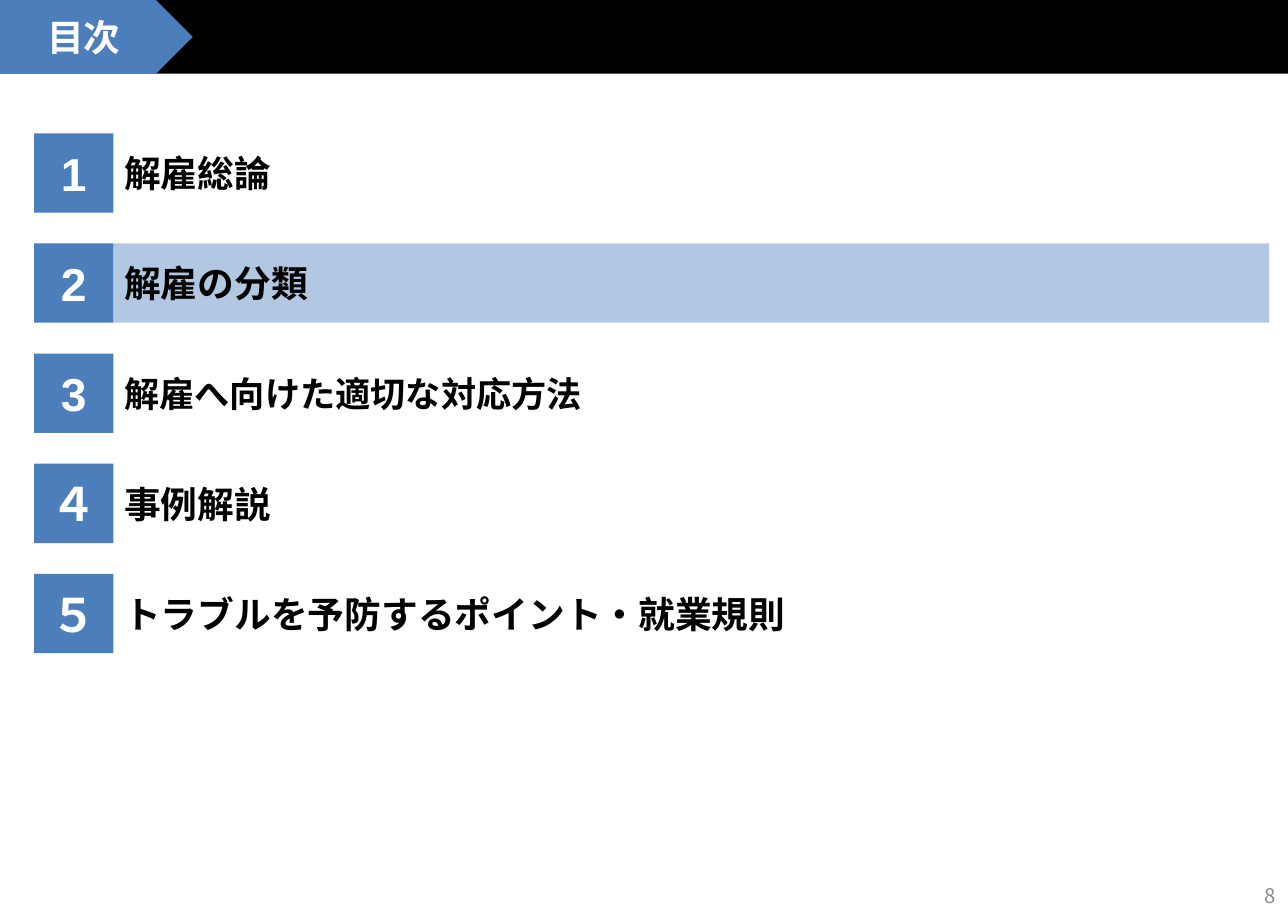
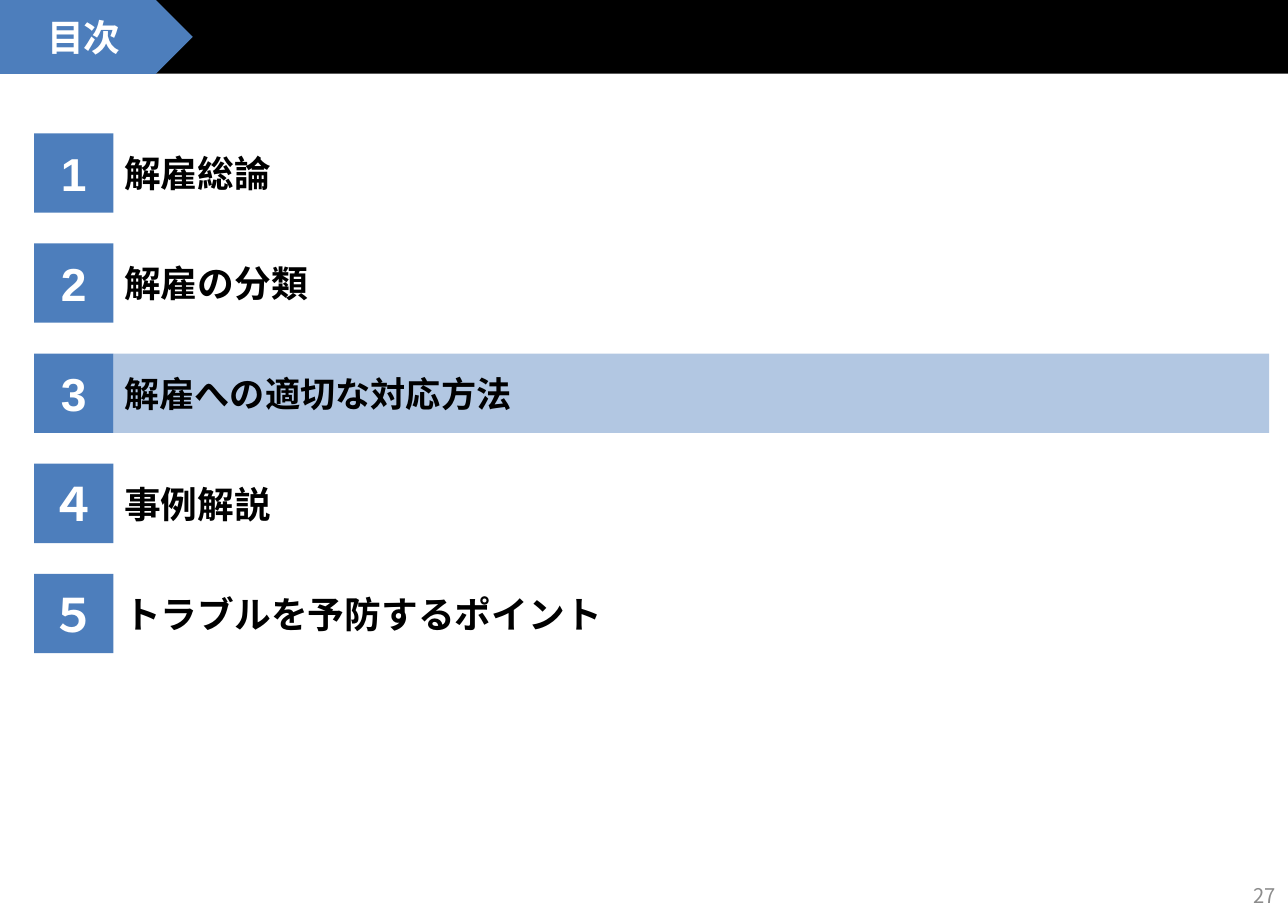
from dataclasses import dataclass
from typing import Any

from lxml import etree
from pptx import Presentation
from pptx.dml.color import RGBColor
from pptx.enum import shapes, text
from pptx.oxml import ns
from pptx.util import Inches, Pt


@dataclass(frozen=True)
class Theme:
    blue: str = "4D7EBC"
    navy: str = "0147A0"
    black: str = "000000"
    white: str = "FFFFFF"
    gray: str = "8C8C8C"
    latin: str = "Arial"
    asian: str = "Noto Sans CJK JP"
    head: float = 24
    digit: float = 30.2
    page: float = 13.2


@dataclass(frozen=True)
class Box:
    left: float
    top: float
    width: float
    height: float

    def args(self) -> tuple:
        return tuple(Inches(v) for v in (self.left, self.top, self.width, self.height))


@dataclass(frozen=True)
class Item:
    digit: str
    label: str
    size: float = 24


@dataclass(frozen=True)
class Agenda:
    page: str
    active: int
    items: tuple[Item, ...]


THEME = Theme()
SHAPE = shapes.MSO_SHAPE
ALIGN = text.PP_ALIGN

# Row grid
TOP, PITCH, TILE = 1.21, 1.0, 0.72
LEFT = 0.31
TEXT = LEFT + TILE

# Shared contents
FIRST = (Item("1", "解雇総論"), Item("2", "解雇の分類"))
CASES = Item("４", "事例解説")
PAGES = (
    Agenda("8", 1, (*FIRST, Item("3", "解雇へ向けた適切な対応方法", 23), CASES,
                    Item("５", "トラブルを予防するポイント・就業規則"))),
    Agenda("27", 2, (*FIRST, Item("3", "解雇への適切な対応方法", 23), CASES,
                     Item("５", "トラブルを予防するポイント"))),
)


def block(parent: Any, kind: Any, box: Box, color: str) -> Any:
    """Add a flat filled shape without an outline."""
    shape = parent.add_shape(kind, *box.args())
    shape.shadow.inherit = False
    shape.fill.solid()
    shape.fill.fore_color.rgb = RGBColor.from_string(color)
    shape.line.fill.background()
    return shape


def write(shape: Any, words: str, size: float, color: str, align: Any,
          bold: bool = True, face: str = THEME.latin) -> None:
    """Set one vertically centred line of text."""
    frame = shape.text_frame
    frame.text = words
    frame.word_wrap = True
    frame.auto_size = text.MSO_AUTO_SIZE.NONE
    frame.vertical_anchor = text.MSO_ANCHOR.MIDDLE
    para = frame.paragraphs[0]
    para.alignment = align
    font = para.font
    font.name, font.size, font.bold = face, Pt(size), bold
    font.color.rgb = RGBColor.from_string(color)
    for props in shape.element.iter(ns.qn("a:defRPr")):
        etree.SubElement(props, ns.qn("a:ea"), typeface=THEME.asian)


def label(parent: Any, box: Box, *style: Any) -> None:
    write(parent.add_textbox(*box.args()), *style)


def bands(layout: Any, slide: Any) -> None:
    """Put the header bands on the layout, behind every title."""
    bar = block(slide.shapes, SHAPE.RECTANGLE, Box(1.3, 0, 10.39, 0.67), THEME.black)
    tag = block(slide.shapes, SHAPE.PENTAGON, Box(0, 0, 1.75, 0.67), THEME.blue)
    for spot, band in enumerate((bar, tag), start=2):
        layout.shapes.element.insert(spot, band.element)


def mark(slide: Any, top: float) -> None:
    """Highlight the current row with a translucent bar."""
    bar = block(slide.shapes, SHAPE.RECTANGLE, Box(TEXT, top, 10.49, TILE), THEME.navy)
    for color in bar.element.spPr.iter(ns.qn("a:srgbClr")):
        etree.SubElement(color, ns.qn("a:alpha"), val="30000")


def row(slide: Any, item: Item, top: float) -> None:
    group = slide.shapes.add_group_shape().shapes
    tile = block(group, SHAPE.RECTANGLE, Box(LEFT, top, TILE, TILE), THEME.blue)
    write(tile, item.digit, THEME.digit, THEME.white, ALIGN.CENTER)
    label(group, Box(TEXT, top, 10.63, TILE), item.label, item.size,
          THEME.black, ALIGN.LEFT)


def fill(slide: Any, plan: Agenda) -> None:
    # Title
    title = slide.shapes.title
    title.left, title.top, title.width, title.height = Box(0, 0.08, 1.52, 0.5).args()
    write(title, "目次", THEME.head, THEME.white, ALIGN.CENTER)
    # Rows
    mark(slide, TOP + plan.active * PITCH)
    for i, item in enumerate(plan.items):
        row(slide, item, TOP + i * PITCH)
    # Page number
    label(slide.shapes, Box(9.05, 7.91, 2.63, 0.44), plan.page, THEME.page,
          THEME.gray, ALIGN.RIGHT, False, THEME.asian)


def main() -> None:
    deck = Presentation()
    deck.slide_width, deck.slide_height = Inches(11.69), Inches(8.27)
    layout = deck.slide_layouts.get_by_name("Title Only")
    slides = [deck.slides.add_slide(layout) for _ in PAGES]
    bands(layout, slides[0])
    for slide, plan in zip(slides, PAGES):
        fill(slide, plan)
    deck.save("out.pptx")


if __name__ == "__main__":
    main()
